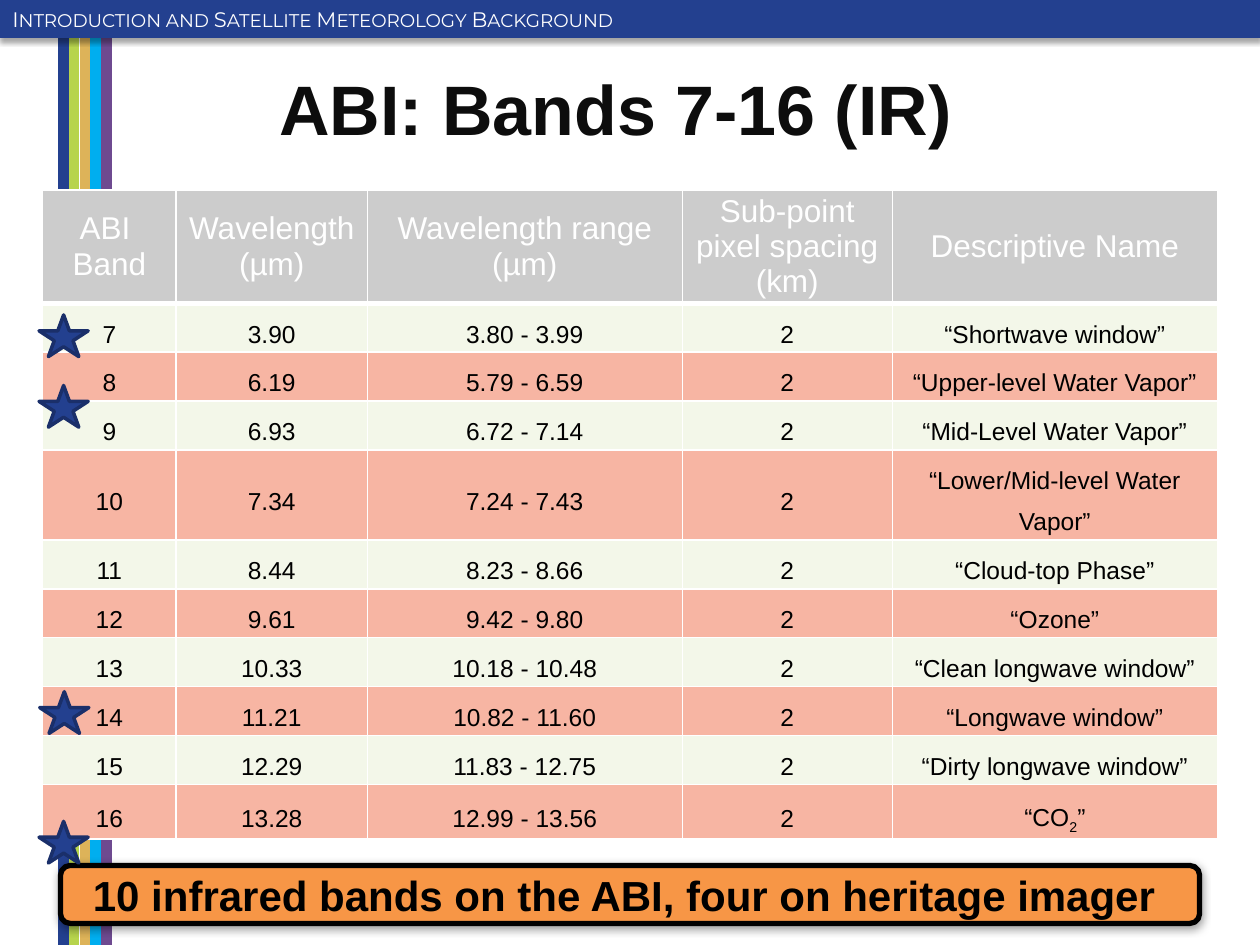
from typing import NamedTuple

from lxml.etree import Element, SubElement
from pptx import Presentation
from pptx.dml.color import RGBColor
from pptx.enum.shapes import MSO_CONNECTOR, MSO_SHAPE
from pptx.enum.text import MSO_ANCHOR, PP_ALIGN
from pptx.oxml.ns import qn
from pptx.util import Pt

NAVY = RGBColor(0x23, 0x40, 0x8F)
DARK_NAVY = RGBColor(0x1A, 0x2F, 0x6A)
LIME = RGBColor(0xB7, 0xD4, 0x4D)
SAND = RGBColor(0xDD, 0xB3, 0x59)
CYAN = RGBColor(0x00, 0xAE, 0xEF)
PURPLE = RGBColor(0x6E, 0x4A, 0x90)
ORANGE = RGBColor(0xF7, 0x96, 0x46)
GRAY = RGBColor(0xCC, 0xCC, 0xCC)
PALE_GREEN = RGBColor(0xF3, 0xF7, 0xE9)
SALMON = RGBColor(0xF7, 0xB5, 0xA3)
WHITE = RGBColor(0xFF, 0xFF, 0xFF)
BLACK = RGBColor(0, 0, 0)
NEAR_BLACK = RGBColor(0x0D, 0x0D, 0x0D)

SLIDE_WIDTH, SLIDE_HEIGHT = 720, 540
STRIPE_COLORS = (NAVY, LIME, SAND, CYAN, PURPLE)
STRIPE_LEFT, STRIPE_STEP = 36.3, 6.12

TABLE_LEFT, TABLE_TOP = 24.3, 108.5
COLUMN_WIDTHS = (76.4, 109.2, 180, 120, 185.8)
HEADER_HEIGHT, ROW_HEIGHT = 64.5, 27.8
TALL_ROW_HEIGHTS = {"10": 51, "16": 30.8}
HEADERS = (
    ("ABI ", "Band"),
    ("Wavelength (µm)",),
    ("Wavelength range (µm)",),
    ("Sub-point pixel spacing (km)",),
    ("Descriptive Name",),
)
STAR_POSITIONS = ((22.3, 220.3), (22.3, 180), (22.7, 395.3), (22.3, 469.4))


class TextStyle(NamedTuple):
    size: float
    color: RGBColor
    bold: bool = False
    font: str = "Arial"


class Box(NamedTuple):
    left: float
    top: float
    width: float
    height: float


class Band(NamedTuple):
    number: str
    wavelength: str
    wavelength_range: str
    spacing: str
    name: str


BANDS = (
    Band("7", "3.90", "3.80 - 3.99", "2", "“Shortwave window”"),
    Band("8", "6.19", "5.79 - 6.59", "2", "“Upper-level Water Vapor”"),
    Band("9", "6.93", "6.72 - 7.14", "2", "“Mid-Level Water Vapor”"),
    Band("10", "7.34", "7.24 - 7.43", "2", "“Lower/Mid-level Water Vapor”"),
    Band("11", "8.44", "8.23 - 8.66", "2", "“Cloud-top Phase”"),
    Band("12", "9.61", "9.42 - 9.80", "2", "“Ozone”"),
    Band("13", "10.33", "10.18 - 10.48", "2", "“Clean longwave window”"),
    Band("14", "11.21", "10.82 - 11.60", "2", "“Longwave window”"),
    Band("15", "12.29", "11.83 - 12.75", "2", "“Dirty longwave window”"),
    Band("16", "13.28", "12.99 - 13.56", "2", "“CO2”"),
)
HEADER_STYLE = TextStyle(18, WHITE)
BODY_STYLE = TextStyle(14, BLACK)


def add_run(paragraph, text: str, style: TextStyle):
    run = paragraph.add_run()
    run.text = text
    run.font.name = style.font
    run.font.size = Pt(style.size)
    run.font.bold = style.bold
    run.font.color.rgb = style.color
    return run


def add_filled_shape(slide, kind, box: Box, fill: RGBColor, line: RGBColor, line_width: float):
    shape = slide.shapes.add_shape(kind, *(Pt(length) for length in box))
    shape.shadow.inherit = False
    shape.fill.solid()
    shape.fill.fore_color.rgb = fill
    shape.line.color.rgb = line
    shape.line.width = Pt(line_width)
    shape.text_frame.word_wrap = True
    shape.text_frame.vertical_anchor = MSO_ANCHOR.MIDDLE
    return shape


def add_shadow(shape, blur: float, distance: float, opacity: int) -> None:
    """Cast a black shadow straight down."""
    effects = shape._element.spPr.find(qn("a:effectLst"))
    shadow = SubElement(effects, qn("a:outerShdw"), blurRad=str(Pt(blur)),
                        dist=str(Pt(distance)), dir="5400000", rotWithShape="0")
    color = SubElement(shadow, qn("a:srgbClr"), val=str(BLACK))
    SubElement(color, qn("a:alpha"), val=str(opacity * 1000))


def add_stripes(slide) -> None:
    for index, color in enumerate(STRIPE_COLORS):
        x = Pt(STRIPE_LEFT + index * STRIPE_STEP)
        stripe = slide.shapes.add_connector(MSO_CONNECTOR.STRAIGHT, x, 0, x, Pt(SLIDE_HEIGHT))
        stripe.line.color.rgb = color
        stripe.line.width = Pt(6)
        SubElement(stripe._element.spPr, qn("a:effectLst"))


def add_section_bar(slide) -> None:
    bar = add_filled_shape(slide, MSO_SHAPE.RECTANGLE, Box(0, 0, SLIDE_WIDTH, 21.6),
                           NAVY, NAVY, 0.75)
    add_shadow(bar, 3.1, 1.8, 35)
    paragraph = bar.text_frame.paragraphs[0]
    paragraph.alignment = PP_ALIGN.LEFT
    initial_style = TextStyle(12, WHITE, font="Montserrat")
    for initial, rest in (("I", "NTRODUCTION AND "), ("S", "ATELLITE "),
                          ("M", "ETEOROLOGY "), ("B", "ACKGROUND")):
        add_run(paragraph, initial, initial_style)
        add_run(paragraph, rest, initial_style._replace(size=10.5))


def add_title(slide) -> None:
    title = slide.shapes.add_textbox(Pt(152.6), Pt(33.8), Pt(414), Pt(55.4))
    title.text_frame.word_wrap = False
    add_run(title.text_frame.paragraphs[0], "ABI: Bands 7-16 (IR)", TextStyle(40, NEAR_BLACK, True))


def format_cell(cell, fill: RGBColor, bottom_border: float) -> None:
    cell.vertical_anchor = MSO_ANCHOR.MIDDLE
    cell.margin_left = cell.margin_right = cell.margin_top = cell.margin_bottom = Pt(2.16)
    cell.fill.solid()
    cell.fill.fore_color.rgb = fill
    properties = cell._tc.get_or_add_tcPr()
    widths = {"lnL": 1, "lnR": 1, "lnT": 1, "lnB": bottom_border}
    for index, (side, width) in enumerate(widths.items()):
        border = Element(qn(f"a:{side}"), w=str(Pt(width)))
        SubElement(SubElement(border, qn("a:solidFill")), qn("a:srgbClr"), val=str(WHITE))
        properties.insert(index, border)


def fill_header_cell(cell, lines: tuple[str, ...]) -> None:
    format_cell(cell, GRAY, 3)
    frame = cell.text_frame
    for index, line in enumerate(lines):
        paragraph = frame.add_paragraph() if index else frame.paragraphs[0]
        paragraph.alignment = PP_ALIGN.CENTER
        add_run(paragraph, line, HEADER_STYLE)


def fill_body_cell(cell, text: str, fill: RGBColor) -> None:
    """Write one value, with the formula digit of CO2 as a subscript."""
    format_cell(cell, fill, 1)
    paragraph = cell.text_frame.paragraphs[0]
    paragraph.alignment = PP_ALIGN.CENTER
    paragraph.line_spacing = 1.5
    before, formula, after = text.partition("CO2")
    if formula:
        add_run(paragraph, before + "CO", BODY_STYLE)
        subscript = add_run(paragraph, "2", BODY_STYLE)
        subscript.font._element.set("baseline", "-25000")
        add_run(paragraph, after, BODY_STYLE)
    else:
        add_run(paragraph, text, BODY_STYLE)


def add_band_table(slide) -> None:
    heights = [HEADER_HEIGHT] + [TALL_ROW_HEIGHTS.get(band.number, ROW_HEIGHT) for band in BANDS]
    table = slide.shapes.add_table(
        len(heights), len(COLUMN_WIDTHS), Pt(TABLE_LEFT), Pt(TABLE_TOP),
        Pt(sum(COLUMN_WIDTHS)), Pt(sum(heights))).table
    table.horz_banding = False
    for column, width in zip(table.columns, COLUMN_WIDTHS):
        column.width = Pt(width)
    for row, height in zip(table.rows, heights):
        row.height = Pt(height)
    for column, lines in enumerate(HEADERS):
        fill_header_cell(table.cell(0, column), lines)
    for row, band in enumerate(BANDS, start=1):
        for column, text in enumerate(band):
            fill_body_cell(table.cell(row, column), text, PALE_GREEN if row % 2 else SALMON)


def add_summary(slide) -> None:
    summary = add_filled_shape(slide, MSO_SHAPE.ROUNDED_RECTANGLE, Box(34.6, 494.6, 650.9, 33.1),
                               ORANGE, BLACK, 3)
    add_shadow(summary, 5, 1.6, 38)
    paragraph = summary.text_frame.paragraphs[0]
    paragraph.alignment = PP_ALIGN.CENTER
    add_run(paragraph, "10 infrared bands on the ABI, four on heritage imager ",
            TextStyle(24, BLACK, True))


def main() -> None:
    presentation = Presentation()
    presentation.slide_width, presentation.slide_height = Pt(SLIDE_WIDTH), Pt(SLIDE_HEIGHT)
    slide = presentation.slides.add_slide(presentation.slide_layouts[6])
    add_stripes(slide)
    add_section_bar(slide)
    add_band_table(slide)
    add_title(slide)
    add_summary(slide)
    for left, top in STAR_POSITIONS:
        add_filled_shape(slide, MSO_SHAPE.STAR_5_POINT, Box(left, top, 28.1, 23.8),
                         NAVY, DARK_NAVY, 2)
    presentation.save("out.pptx")


if __name__ == "__main__":
    main()
